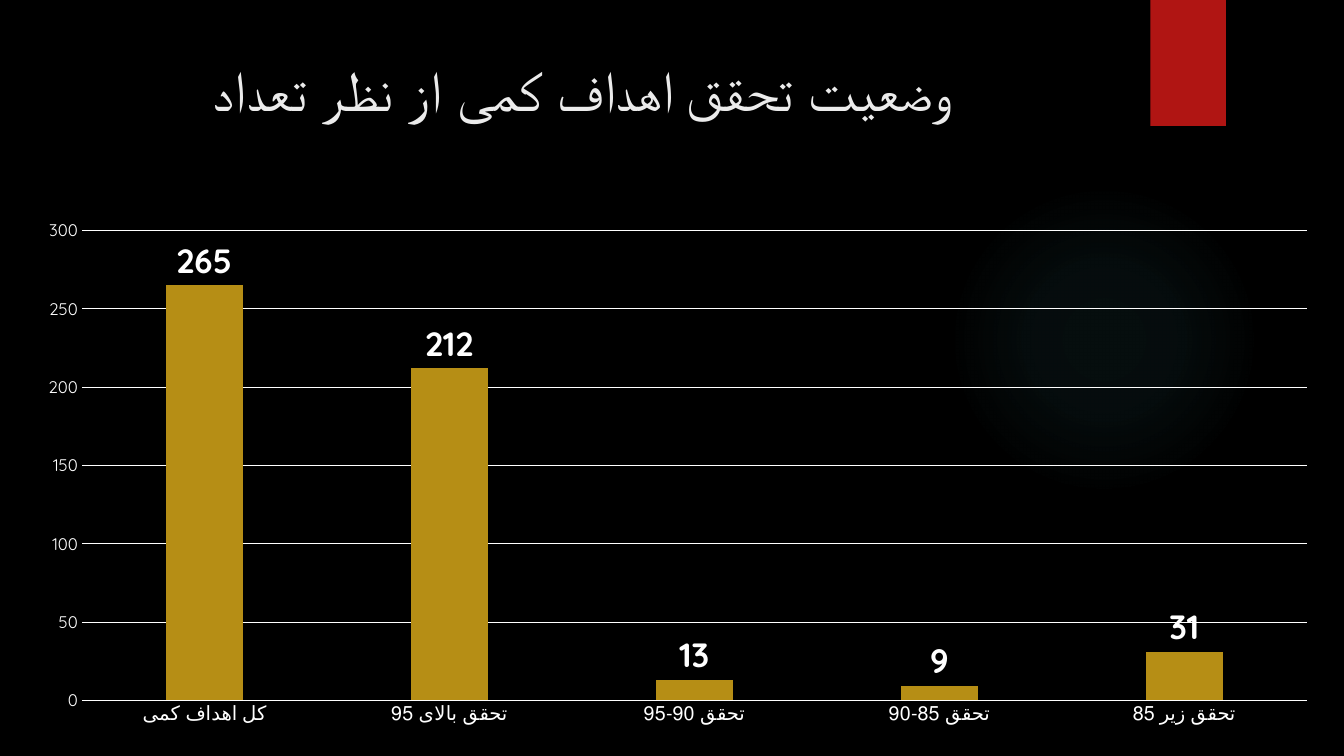
from lxml import etree
from pptx import Presentation
from pptx.chart.data import CategoryChartData
from pptx.dml.color import RGBColor
from pptx.enum.chart import XL_CHART_TYPE, XL_LABEL_POSITION, XL_TICK_MARK
from pptx.enum.shapes import MSO_SHAPE
from pptx.enum.text import MSO_ANCHOR, MSO_AUTO_SIZE, PP_ALIGN
from pptx.oxml import parse_xml
from pptx.oxml.ns import nsdecls, qn
from pptx.util import Inches, Pt

COLUMNS = XL_CHART_TYPE.COLUMN_CLUSTERED
OUTSIDE_END = XL_LABEL_POSITION.OUTSIDE_END
NO_TICK = XL_TICK_MARK.NONE
OVAL, RECTANGLE = MSO_SHAPE.OVAL, MSO_SHAPE.RECTANGLE
TOP, CENTER = MSO_ANCHOR.TOP, PP_ALIGN.CENTER
NO_AUTOFIT = MSO_AUTO_SIZE.NONE
TITLE_ONLY = 5

FONT = "Quicksand"
COLORS = {
    "background": "000000",
    "glow": "50B9C1",
    "ribbon": "B01513",
    "title": "EBEBEB",
    "white": "FFFFFF",
    "bar": "B68E15",
}
GOALS = {
    "کل اهداف کمی": 265,
    "تحقق بالای 95": 212,
    "تحقق 90-95": 13,
    "تحقق 85-90": 9,
    "تحقق زیر 85": 31,
}


def color(name):
    return RGBColor.from_string(COLORS[name])


def style_font(font, size, color_name, bold=False):
    font.name = FONT
    font.size = Pt(size)
    font.bold = bold
    font.color.rgb = color(color_name)


def style_line(line, color_name):
    line.color.rgb = color(color_name)
    line.width = Pt(0.75)


def add_plain_shape(slide, kind, left, top, width, height, fill):
    shape = slide.shapes.add_shape(
        kind, Inches(left), Inches(top), Inches(width), Inches(height))
    shape.shadow.inherit = False
    shape.fill.solid()
    shape.fill.fore_color.rgb = color(fill)
    shape.line.fill.background()
    return shape


def fade_from_center(shape, color_name, stops):
    """Replace the solid fill by a circular gradient of (position, opacity) stops."""
    stop_xml = "".join(
        f'<a:gs pos="{position * 1000}"><a:srgbClr val="{COLORS[color_name]}">'
        f'<a:alpha val="{opacity * 1000}"/></a:srgbClr></a:gs>'
        for position, opacity in stops)
    gradient = parse_xml(
        f'<a:gradFill {nsdecls("a")} rotWithShape="1"><a:gsLst>{stop_xml}</a:gsLst>'
        '<a:path path="circle"><a:fillToRect l="50000" t="50000" r="50000" b="50000"/>'
        '</a:path></a:gradFill>')
    properties = shape.element.spPr
    properties.replace(properties.find(qn("a:solidFill")), gradient)


def set_title(slide, text):
    title = slide.shapes.title
    title.left, title.top = Inches(0.71), Inches(0.5)
    title.width, title.height = Inches(10.29), Inches(1.53)
    frame = title.text_frame
    frame.text = text
    frame.word_wrap = True
    frame.auto_size = NO_AUTOFIT
    frame.vertical_anchor = TOP
    paragraph = frame.paragraphs[0]
    paragraph.alignment = CENTER
    font = paragraph.runs[0].font
    style_font(font, 40, "title")
    # Persian letters take the complex-script typeface
    etree.SubElement(paragraph.runs[0]._r.rPr, qn("a:cs"), typeface=FONT)


def style_axes(chart):
    categories, values = chart.category_axis, chart.value_axis
    for axis, size in ((categories, 14), (values, 12)):
        axis.major_tick_mark = axis.minor_tick_mark = NO_TICK
        style_font(axis.tick_labels.font, size, "white")
    style_line(categories.format.line, "white")
    values.format.line.fill.background()
    values.minimum_scale, values.maximum_scale, values.major_unit = 0, 300, 50
    values.has_major_gridlines = True
    style_line(values.major_gridlines.format.line, "white")


def add_goal_chart(slide, goals):
    data = CategoryChartData(number_format="General")
    data.categories = list(goals)
    data.add_series("Series 1", list(goals.values()))
    chart = slide.shapes.add_chart(
        COLUMNS, Inches(0.22), Inches(2.08), Inches(13), Inches(5.21), data).chart
    chart.has_title = False
    chart.has_legend = False
    style_font(chart.font, 10, "white")
    style_axes(chart)

    # Bars and their values
    plot = chart.plots[0]
    plot.vary_by_categories = False
    plot.gap_width, plot.overlap = 219, -27
    series = plot.series[0]
    series.invert_if_negative = False
    series.format.fill.solid()
    series.format.fill.fore_color.rgb = color("bar")
    labels = series.data_labels
    labels.show_value = True
    labels.position = OUTSIDE_END
    style_font(labels.font, 24, "white", bold=True)


def main():
    presentation = Presentation()
    presentation.slide_width, presentation.slide_height = Inches(13.33), Inches(7.5)
    slide = presentation.slides.add_slide(presentation.slide_layouts[TITLE_ONLY])

    # Backdrop
    slide.background.fill.solid()
    slide.background.fill.fore_color.rgb = color("background")
    glow = add_plain_shape(slide, OVAL, 9.41, 1.83, 3.08, 3.08, "glow")
    fade_from_center(glow, "glow", [(0, 7), (36, 6), (69, 0)])
    add_plain_shape(slide, RECTANGLE, 11.41, 0, 0.75, 1.25, "ribbon")

    # Content
    set_title(slide, "وضعیت تحقق اهداف کمی از نظر تعداد ")
    add_goal_chart(slide, GOALS)
    presentation.save("out.pptx")


if __name__ == "__main__":
    main()
